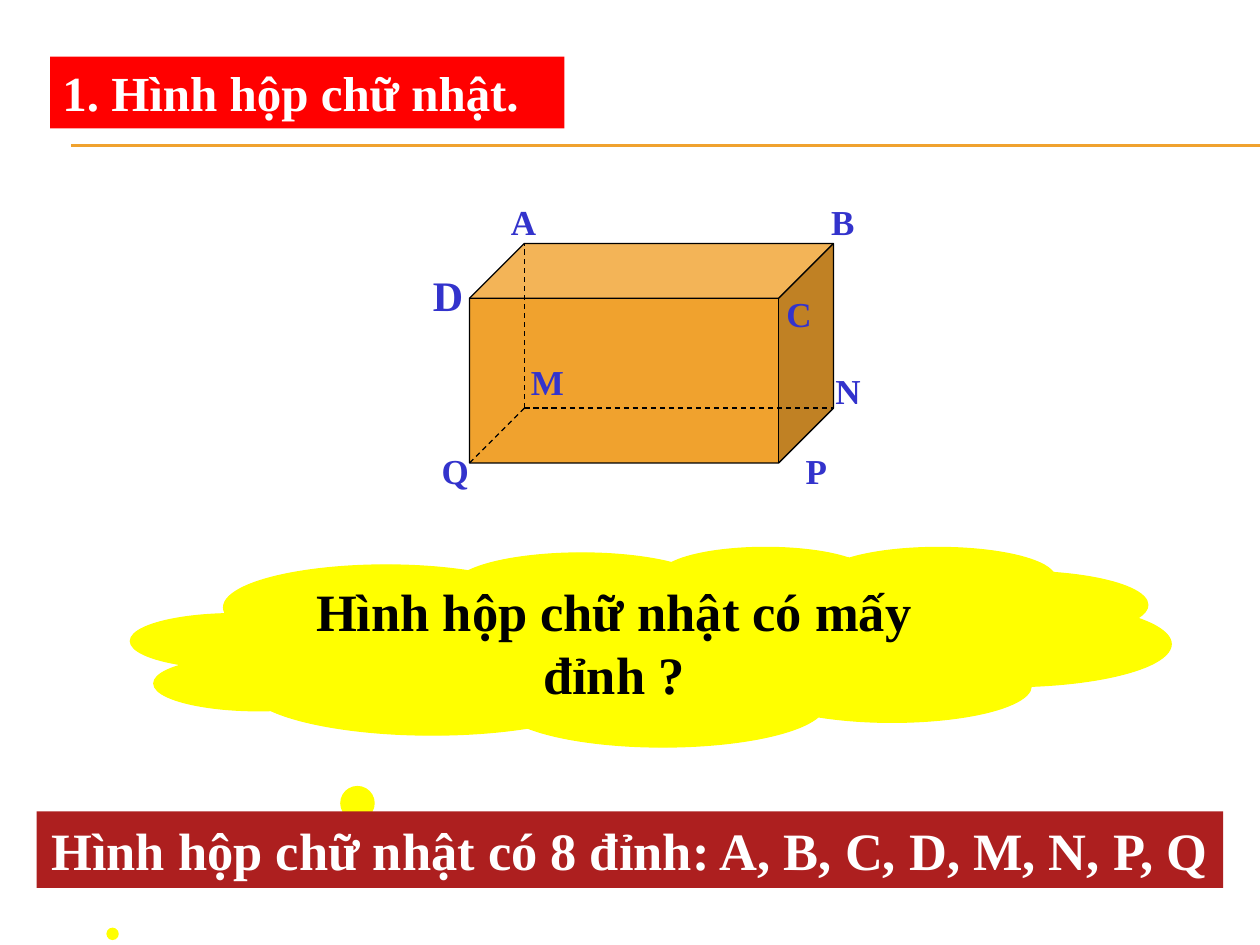
from lxml.etree import SubElement
from pptx import Presentation
from pptx.dml.color import RGBColor
from pptx.enum.dml import MSO_LINE
from pptx.enum.shapes import MSO_CONNECTOR, MSO_SHAPE
from pptx.enum.text import MSO_ANCHOR, PP_ALIGN
from pptx.oxml.ns import qn
from pptx.util import Pt

FONT = "Times New Roman"
ORANGE = "F0A22E"
LABEL_BLUE = "3333CC"


def color(hex_string):
    """Turn a hex string into a colour."""
    return RGBColor.from_string(hex_string)


def write(shape, text, size, hex_string, alignment, anchor=MSO_ANCHOR.TOP, wrap=True):
    """Set one bold paragraph in a shape."""
    frame = shape.text_frame
    frame.text = text
    frame.word_wrap = wrap
    frame.vertical_anchor = anchor
    paragraph = frame.paragraphs[0]
    paragraph.alignment = alignment
    font = paragraph.runs[0].font
    font.name, font.size, font.bold = FONT, Pt(size), True
    font.color.rgb = color(hex_string)


def add_solid(slide, kind, box, fill, line=None):
    """Add a filled preset shape without shadow."""
    shape = slide.shapes.add_shape(kind, *(Pt(length) for length in box))
    shape.shadow.inherit = False
    shape.fill.solid()
    shape.fill.fore_color.rgb = color(fill)
    if line:
        shape.line.color.rgb = color(line)
        shape.line.width = Pt(0.75)
    else:
        shape.line.fill.background()
    return shape


def add_line(slide, start, end, hex_string, dash=None):
    """Add a thin straight line between two points."""
    line = slide.shapes.add_connector(
        MSO_CONNECTOR.STRAIGHT, *(Pt(length) for length in (*start, *end)))
    line.line.color.rgb = color(hex_string)
    line.line.width = Pt(0.75)
    line.line.dash_style = dash
    SubElement(line._element.spPr, qn("a:effectLst"))


def add_rules(slide, left, top, width):
    """Draw the double rule under the heading."""
    for y in (top, top + 0.6):
        add_line(slide, (left, y), (left + width, y), ORANGE)


def add_question(slide, box):
    """Draw the cloud with the question."""
    cloud = add_solid(slide, MSO_SHAPE.CLOUD_CALLOUT, box, "FFFF00", "FFFF00")
    cloud.adjustments[0] = -0.518
    cloud.adjustments[1] = 1.44
    write(cloud, "Hình hộp chữ nhật có mấy đỉnh ?", 30, "000000",
          PP_ALIGN.CENTER, MSO_ANCHOR.MIDDLE)


def add_banner(slide, box, text, size, fill, alignment, wrap):
    """Draw a coloured strip with white text."""
    banner = add_solid(slide, MSO_SHAPE.RECTANGLE, box, fill)
    write(banner, text, size, "FFFFFF", alignment, wrap=wrap)


def add_box_figure(slide, left, top, width, height):
    """Draw the box with its hidden edges and vertex names."""
    cube = add_solid(slide, MSO_SHAPE.CUBE, (left, top, width, height), ORANGE, "000000")
    cube.adjustments[0] = 0.25
    depth = height * 0.25
    right, bottom = left + width, top + height
    hidden = (left + depth, bottom - depth)
    for end in ((left + depth, top), (right, bottom - depth), (left, bottom)):
        add_line(slide, hidden, end, "000000", MSO_LINE.DASH)

    labels = {
        "A": (16.5, -28), "B": (199.5, -28), "C": (174, 24.5), "D": (-28, 11.5),
        "M": (28, 63.5), "N": (202, 68.5), "P": (185, 114.5), "Q": (-23, 114.5),
    }
    for name, (x, y) in labels.items():
        label = slide.shapes.add_textbox(Pt(left + x), Pt(top + y), Pt(40), Pt(31))
        write(label, name, 24 if name == "D" else 20, LABEL_BLUE, PP_ALIGN.LEFT)


def main():
    """Build and save the slide."""
    presentation = Presentation()
    presentation.slide_width, presentation.slide_height = Pt(720), Pt(540)
    slide = presentation.slides.add_slide(presentation.slide_layouts[6])
    add_rules(slide, 40.5, 82.8, 679.5)
    add_question(slide, (75, 312.5, 594, 114))
    add_banner(slide, (28.6, 32.4, 294, 41), "1. Hình hộp chữ nhật.", 28,
               "FF0000", PP_ALIGN.LEFT, True)
    add_banner(slide, (21, 463.7, 678, 43.7),
               "Hình hộp chữ nhật có 8 đỉnh: A, B, C, D, M, N, P, Q", 30,
               "AD1F1F", PP_ALIGN.CENTER, False)
    add_box_figure(slide, 268.3, 139.1, 208, 125.5)
    presentation.save("out.pptx")


if __name__ == "__main__":
    main()
